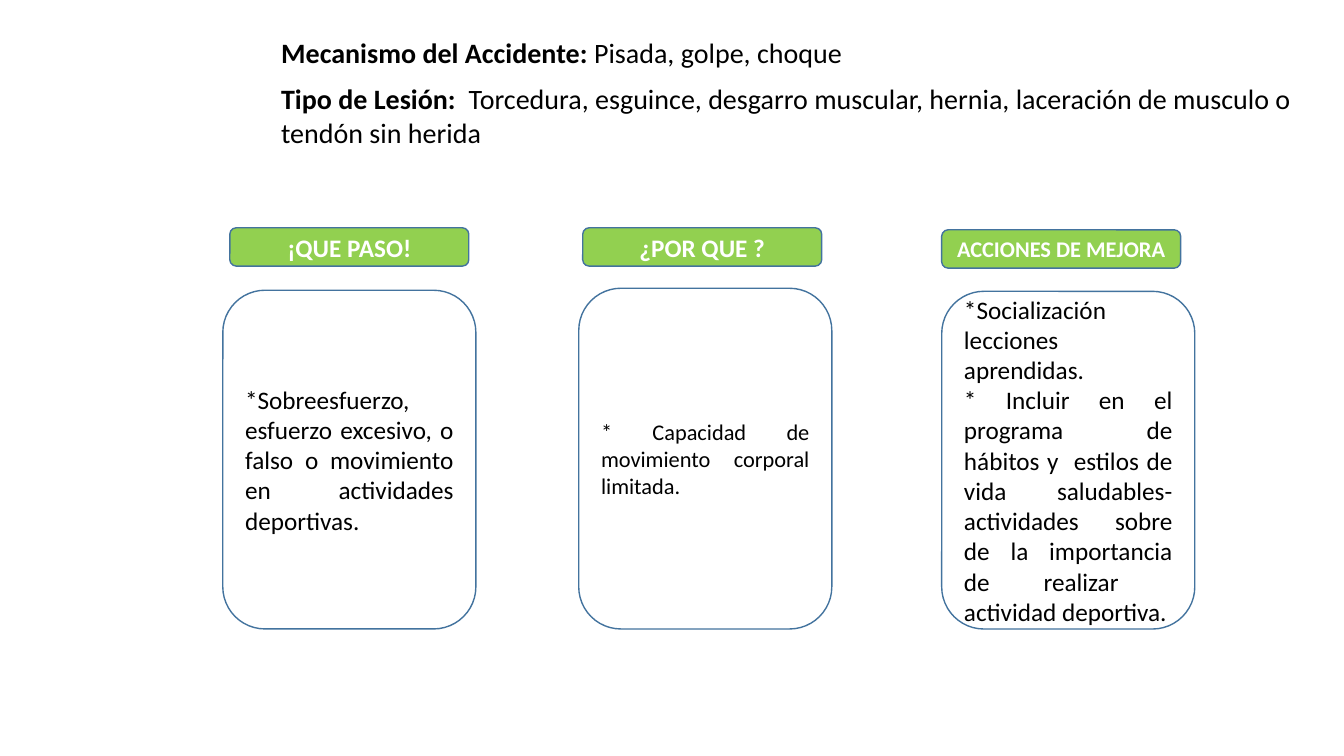
from dataclasses import dataclass

from pptx import Presentation
from pptx.dml.color import RGBColor
from pptx.enum.shapes import MSO_SHAPE
from pptx.enum.text import MSO_ANCHOR, MSO_AUTO_SIZE, PP_ALIGN
from pptx.util import Inches, Pt

ROUNDED = MSO_SHAPE.ROUNDED_RECTANGLE
MIDDLE = MSO_ANCHOR.MIDDLE
FIT_SHAPE = MSO_AUTO_SIZE.SHAPE_TO_FIT_TEXT
CENTER, JUSTIFY = PP_ALIGN.CENTER, PP_ALIGN.JUSTIFY

BLACK = RGBColor(0x00, 0x00, 0x00)
WHITE = RGBColor(0xFF, 0xFF, 0xFF)
GREEN = RGBColor(0x92, 0xD0, 0x50)
BLUE = RGBColor(0x43, 0x73, 0x9E)
FONT = "Calibri"

LEFT = 2.69
HEADING_W, HEADING_H = 2.37, 0.38
CARD_W, CARD_BOTTOM = 2.51, 6.24


@dataclass
class Fact:
    label: str
    detail: str
    top: float
    width: float
    height: float


@dataclass
class Column:
    heading: str
    heading_left: float
    heading_top: float
    heading_size: int
    lines: list[str]
    card_left: float
    card_top: float
    card_size: int


FACTS = [
    Fact("Mecanismo del Accidente: ", "Pisada, golpe, choque", 0.3, 9.89, 0.44),
    Fact("Tipo de Lesión:  ",
         "Torcedura, esguince, desgarro muscular, hernia, laceración de musculo o "
         "tendón sin herida", 0.76, 10.64, 0.77),
]

COLUMNS = [
    Column("¡QUE PASO!", 2.28, 2.26, 18,
           ["*Sobreesfuerzo, esfuerzo excesivo, o falso o movimiento en "
            "actividades deportivas."], 2.21, 2.88, 18),
    Column("¿POR QUE ?", 5.78, 2.26, 18,
           ["* Capacidad de movimiento corporal limitada."], 5.74, 2.86, 16),
    Column("ACCIONES DE MEJORA", 9.34, 2.28, 16,
           ["*Socialización  lecciones aprendidas.",
            "* Incluir en el programa de hábitos y  estilos de vida "
            "saludables-actividades sobre de la importancia de realizar  "
            "actividad deportiva."], 9.34, 2.89, 18),
]


def add_run(p, text: str, size: int, color: RGBColor, bold: bool = False) -> None:
    r = p.add_run()
    r.text = text
    r.font.name = FONT
    r.font.size = Pt(size)
    r.font.bold = bold
    r.font.color.rgb = color


def add_fact(s, fact: Fact) -> None:
    box = s.shapes.add_textbox(Inches(LEFT), Inches(fact.top),
                               Inches(fact.width), Inches(fact.height))
    tf = box.text_frame
    tf.word_wrap = True
    tf.auto_size = FIT_SHAPE
    p = tf.paragraphs[0]
    add_run(p, fact.label, 20, BLACK, bold=True)
    add_run(p, fact.detail, 20, BLACK)


def add_panel(s, left: float, top: float, width: float, height: float,
              fill: RGBColor, lines: list[str], size: int, color: RGBColor,
              align: PP_ALIGN, bold: bool = False) -> None:
    sp = s.shapes.add_shape(ROUNDED, Inches(left), Inches(top),
                            Inches(width), Inches(height))
    sp.shadow.inherit = False
    sp.fill.solid()
    sp.fill.fore_color.rgb = fill
    sp.line.color.rgb = BLUE
    sp.line.width = Pt(1)
    tf = sp.text_frame
    tf.word_wrap = True
    tf.vertical_anchor = MIDDLE
    for i, line in enumerate(lines):
        p = tf.add_paragraph() if i else tf.paragraphs[0]
        p.alignment = align
        add_run(p, line, size, color, bold)


def add_column(s, col: Column) -> None:
    add_panel(s, col.card_left, col.card_top, CARD_W, CARD_BOTTOM - col.card_top,
              WHITE, col.lines, col.card_size, BLACK, JUSTIFY)
    add_panel(s, col.heading_left, col.heading_top, HEADING_W, HEADING_H,
              GREEN, [col.heading], col.heading_size, WHITE, CENTER, bold=True)


def main() -> None:
    prs = Presentation()
    prs.slide_width = Inches(13.33)
    prs.slide_height = Inches(7.5)
    s = prs.slides.add_slide(prs.slide_layouts[6])

    # Accident facts
    for fact in FACTS:
        add_fact(s, fact)

    # Columns: what happened, why, improvements
    for col in COLUMNS:
        add_column(s, col)

    prs.save("out.pptx")


if __name__ == "__main__":
    main()
